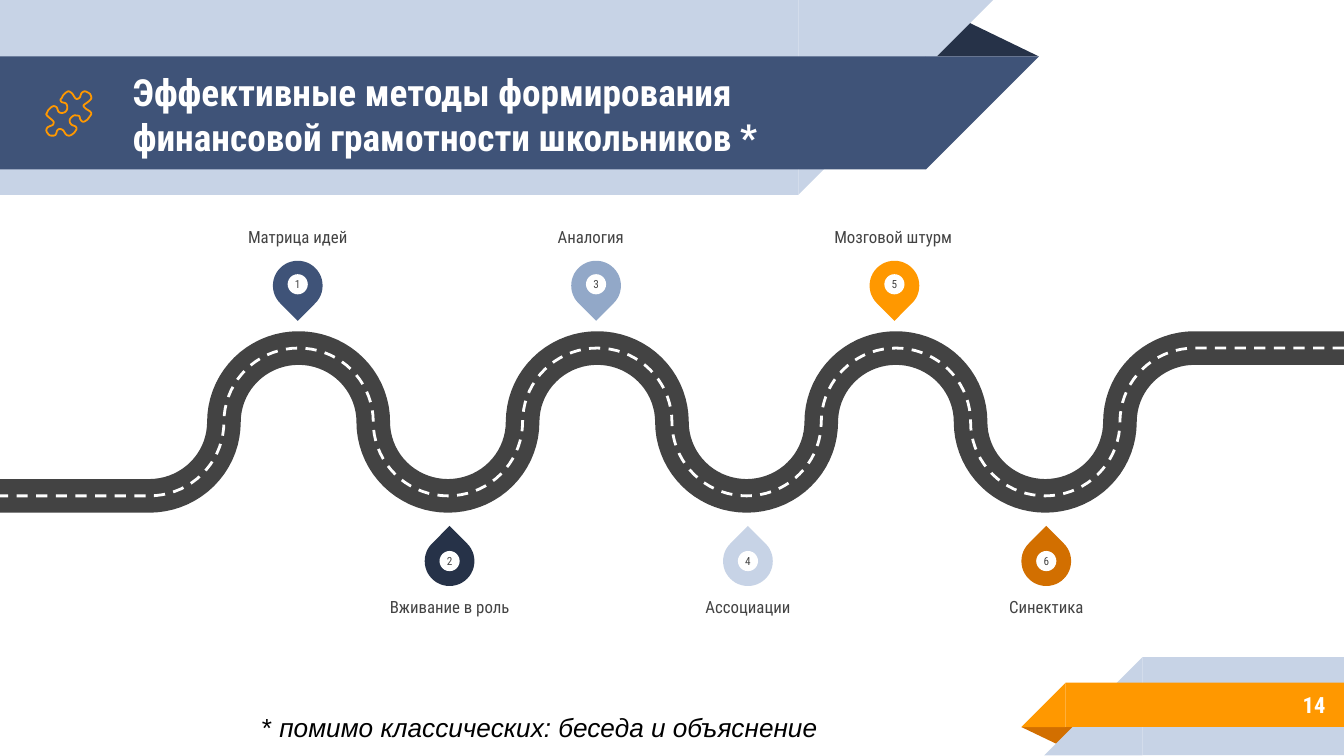
import math

import pptx
import pptx.util
import pptx.dml.color
import pptx.enum.dml
import pptx.enum.shapes
import pptx.enum.text

Inches = pptx.util.Inches
SHAPES = pptx.enum.shapes.MSO_SHAPE
ANCHOR = pptx.enum.text.MSO_ANCHOR
ALIGN = pptx.enum.text.PP_ALIGN

COLORS = {
    "navy": "263248",
    "blue": "3F5378",
    "steel": "92A8C8",
    "pale": "C7D3E6",
    "orange": "FF9800",
    "rust": "D26F00",
    "asphalt": "434343",
    "white": "FFFFFF",
    "black": "000000",
}

METHODS = [
    ("Матрица идей", "blue", 1.51),
    ("Вживание в роль", "navy", 2.64),
    ("Аналогия", "steel", 3.69),
    ("Ассоциации", "pale", 4.86),
    ("Мозговой штурм", "orange", 5.94),
    ("Синектика", "rust", 7.08),
]

PUZZLE = [
    (64, 77), (66, 75.5), (67.5, 74), (68, 72.5), (67, 70), (65, 68.7),
    (63, 68), (61, 69), (60, 71), (59.5, 72.5), (57.5, 73.7), (56, 73),
    (54, 70), (52.5, 68.7), (51, 68), (49, 69), (47, 71), (46, 73),
    (45, 74.3), (46, 76), (49, 77), (50, 79), (50, 81), (49, 83),
    (47, 84), (45, 84), (43.5, 83), (42.7, 81), (42, 79.7), (40, 79),
    (38, 80), (36, 82), (35, 84), (34.5, 85.3), (36, 87), (39, 89.5),
    (40, 91), (39.3, 93), (37, 94), (35.3, 95), (34.5, 97), (35.3, 99),
    (37, 100.7), (39, 101), (41, 100.7), (42, 99), (42.7, 97), (44.5, 96),
    (47, 97), (49, 100), (51, 101), (53, 100.5), (55, 99), (56.5, 97),
    (57, 95.5), (56, 94), (53.5, 93), (52, 91), (52, 89), (53, 87.5),
    (55, 86), (57, 86), (59, 86.5), (59.7, 88.7), (61, 90.3), (62.5, 90.6),
    (65, 89), (67, 86.5), (68, 84.7), (67, 83), (64, 81), (62.2, 79),
    (62.6, 78),
]


def color(name):
    return pptx.dml.color.RGBColor.from_string(COLORS[name])


def write(shape, text, size=9, fill="asphalt", font="Roboto Condensed", bold=False,
          italic=False, align=ALIGN.LEFT, anchor=ANCHOR.TOP, margin=0, wrap=True):
    frame = shape.text_frame
    frame.word_wrap = wrap
    frame.vertical_anchor = anchor
    frame.margin_left = frame.margin_right = Inches(margin)
    frame.margin_top = frame.margin_bottom = Inches(margin)
    paragraph = frame.paragraphs[0]
    paragraph.alignment = align
    run = paragraph.add_run()
    run.text = text
    run.font.name = font
    run.font.size = pptx.util.Pt(size)
    run.font.bold = bold
    run.font.italic = italic
    run.font.color.rgb = color(fill)


def road_points(radius=10 / 18, rise=0.55, middle=3.14, arcs=8, step=5):
    points = [(10, middle - rise)]
    for index in range(arcs):
        center = (16 - 2 * index) * radius
        side = -1 if index % 2 == 0 else 1
        first = 90 if index == 0 else step
        last = 90 if index == arcs - 1 else 180
        for degrees in range(first, last + 1, step):
            angle = math.radians(degrees)
            points.append((center + radius * math.cos(angle),
                           middle + side * rise * math.sin(angle)))
    return points + [(0, middle + rise)]


def smooth_loop(points, steps=4):
    curve = []
    for index in range(len(points)):
        a, b, c, d = (points[(index + shift) % len(points)] for shift in (-1, 0, 1, 2))
        for step in range(steps):
            t = step / steps
            curve.append(tuple(
                (2 * q + (r - p) * t + (2 * p - 5 * q + 4 * r - s) * t ** 2
                 + (3 * q - p - 3 * r + s) * t ** 3) / 200
                for p, q, r, s in zip(a, b, c, d)))
    return curve


class Painter:
    def __init__(self, slide):
        self.slide = slide

    def shape(self, kind, left, top, width, height, fill, rotation=0, adjust=None):
        shape = self.slide.shapes.add_shape(
            kind, Inches(left), Inches(top), Inches(width), Inches(height))
        shape.shadow.inherit = False
        shape.fill.solid()
        shape.fill.fore_color.rgb = color(fill)
        shape.line.fill.background()
        shape.rotation = rotation
        if adjust is not None:
            shape.adjustments[0] = adjust
        return shape

    def text(self, left, top, width, height, text, **style):
        box = self.slide.shapes.add_textbox(
            Inches(left), Inches(top), Inches(width), Inches(height))
        write(box, text, **style)
        return box

    def outline(self, points, line, width, dash=None, close=False):
        corners = [(Inches(x), Inches(y)) for x, y in points]
        builder = self.slide.shapes.build_freeform(*corners[0])
        builder.add_line_segments(corners[1:], close=close)
        shape = builder.convert_to_shape()
        shape.shadow.inherit = False
        shape.fill.background()
        shape.line.color.rgb = color(line)
        shape.line.width = pptx.util.Pt(width)
        if dash:
            shape.line.dash_style = dash

    def left_band(self, top, width, height, fill):
        self.shape(SHAPES.RECTANGLE, 0, top, width, height, fill)
        self.shape(SHAPES.RIGHT_TRIANGLE, width, top, height, height, fill, 90)

    def right_band(self, left, top, height, fill):
        self.shape(SHAPES.RECTANGLE, left, top, 10 - left, height, fill)
        self.shape(SHAPES.RIGHT_TRIANGLE, left - height, top, height, height, fill, 270)

    def pin(self, number, label, fill, label_left):
        above = number % 2 == 1
        left = (2.03 if above else 3.16) + 2.22 * ((number - 1) // 2)
        top = 1.94 if above else 3.99
        self.shape(SHAPES.TEAR, left, top, 0.37, 0.37, fill, 135 if above else 315, 1)
        badge = self.shape(SHAPES.OVAL, left + 0.11, top + (0.1 if above else 0.11),
                           0.15, 0.15, "white")
        write(badge, str(number), size=6, align=ALIGN.CENTER, anchor=ANCHOR.MIDDLE)
        self.text(label_left, 1.26 if above else 4.44, 1.41, 0.58, label,
                  align=ALIGN.CENTER, anchor=ANCHOR.BOTTOM if above else ANCHOR.TOP)


def main():
    presentation = pptx.Presentation()
    presentation.slide_width = Inches(10)
    presentation.slide_height = Inches(10 * 9 / 16)
    painter = Painter(presentation.slides.add_slide(presentation.slide_layouts[6]))

    painter.shape(SHAPES.ISOSCELES_TRIANGLE, 6.88, 0.14, 0.85, 0.28, "navy", adjust=0.32)
    painter.left_band(0, 5.94, 1.45, "pale")
    painter.left_band(0.42, 6.89, 0.84, "blue")
    painter.shape(SHAPES.ISOSCELES_TRIANGLE, 7.6, 5.41, 0.43, 0.14, "rust", 180, 0.32)
    painter.right_band(8.5, 4.89, 0.73, "pale")
    painter.right_band(7.93, 5.08, 0.33, "orange")

    heading = {"fill": "white", "bold": True, "anchor": ANCHOR.MIDDLE, "margin": 0.1}
    painter.text(0.89, 0.43, 5.75, 0.84,
                 "Эффективные методы формирования финансовой грамотности школьников *",
                 size=20, **heading)
    painter.text(8.33, 5.07, 1.63, 0.35, "14", size=12, align=ALIGN.RIGHT, **heading)

    road = road_points()
    painter.outline(road, "asphalt", 18)
    painter.outline(road, "white", 1.5, pptx.enum.dml.MSO_LINE.DASH)
    for number, method in enumerate(METHODS, start=1):
        painter.pin(number, *method)
    painter.outline(smooth_loop(PUZZLE), "orange", 0.96, close=True)

    footnote = {"size": 14, "font": "Arial", "fill": "black", "margin": 0.1, "wrap": False,
                "anchor": ANCHOR.MIDDLE}
    box = painter.text(1.85, 5.24, 4.41, 0.34, "* ", **footnote)
    write(box, "помимо классических: беседа и объяснение", italic=True, **footnote)

    presentation.save("out.pptx")


if __name__ == "__main__":
    main()
